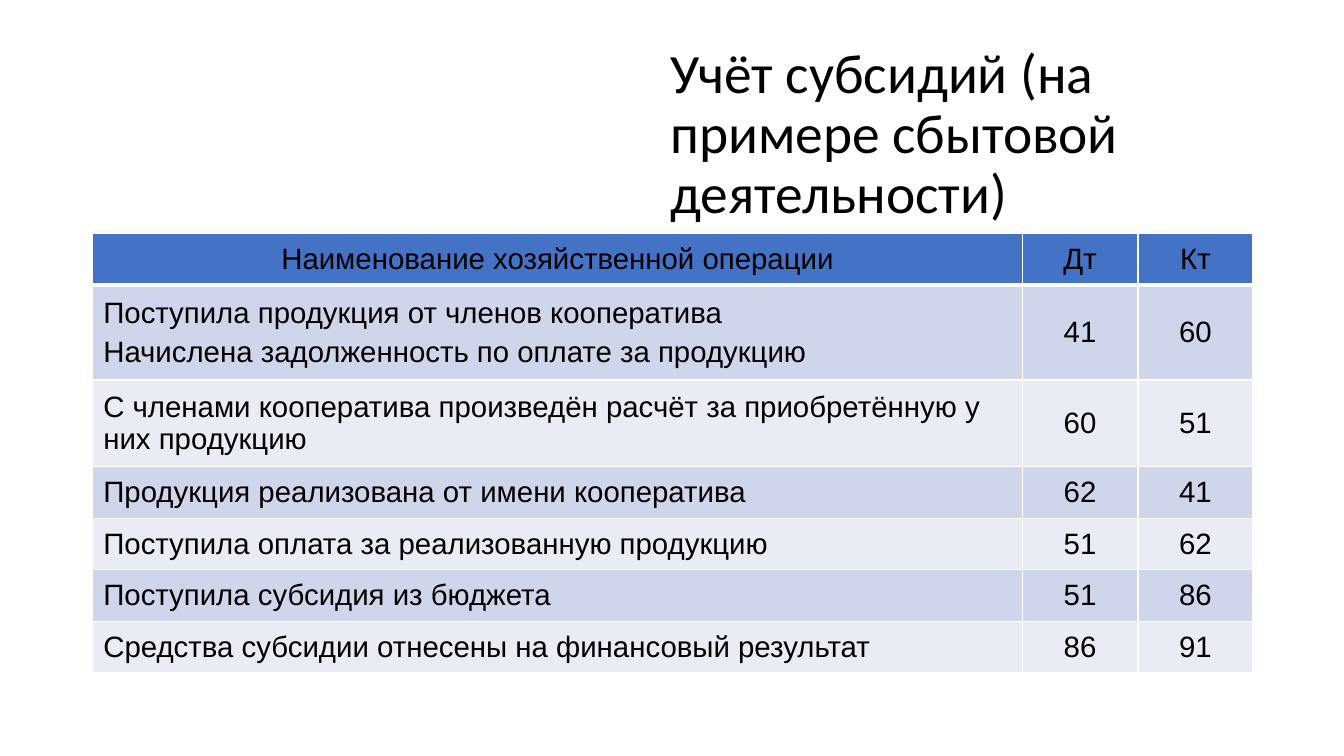
"""Build a slide with the accounting entries for cooperative subsidies."""
import dataclasses

import lxml.etree
import pptx
import pptx.dml.color
import pptx.enum.text
import pptx.oxml.ns
import pptx.table
import pptx.text.text
import pptx.util

Pt = pptx.util.Pt
Align = pptx.enum.text.PP_ALIGN
Anchor = pptx.enum.text.MSO_ANCHOR

COLOURS = {
    "text": "000000",
    "border": "FFFFFF",
    "header": "4472C4",
    "odd": "CFD5EA",
    "even": "E9EBF5",
}
COLUMN_WIDTHS = (663.8, 82.8, 82.1)


@dataclasses.dataclass(frozen=True)
class Entry:
    operation: str
    debit: str
    credit: str
    height: float = 36.8


ENTRIES = (
    Entry("Наименование хозяйственной операции", "Дт", "Кт"),
    Entry(
        "Поступила продукция от членов кооператива\n"
        "Начислена задолженность по оплате за продукцию",
        "41", "60", 67.7,
    ),
    Entry(
        "С членами кооператива произведён расчёт за приобретённую у них продукцию",
        "60", "51", 61.9,
    ),
    Entry("Продукция реализована от имени кооператива", "62", "41"),
    Entry("Поступила оплата за реализованную продукцию", "51", "62"),
    Entry("Поступила субсидия из бюджета", "51", "86"),
    Entry("Средства субсидии отнесены на финансовый результат", "86", "91"),
)


def colour(name: str) -> pptx.dml.color.RGBColor:
    return pptx.dml.color.RGBColor.from_string(COLOURS[name])


def format_para(para: pptx.text.text._Paragraph, font: str, size: float, align: Align) -> None:
    para.alignment = align
    for span in para.runs:
        span.font.name = font
        span.font.size = Pt(size)
        span.font.bold = False
        span.font.color.rgb = colour("text")


def add_borders(cell: pptx.table._Cell, bottom: float) -> None:
    qn = pptx.oxml.ns.qn
    properties = cell._tc.get_or_add_tcPr()
    for side, width in (("L", 1), ("R", 1), ("T", 1), ("B", bottom)):
        line = lxml.etree.SubElement(properties, qn(f"a:ln{side}"), w=str(Pt(width)))
        fill = lxml.etree.SubElement(line, qn("a:solidFill"))
        lxml.etree.SubElement(fill, qn("a:srgbClr"), val=COLOURS["border"])


def fill_cell(cell: pptx.table._Cell, text: str, fill: str, align: Align) -> None:
    add_borders(cell, 3 if fill == "header" else 1)
    cell.fill.solid()
    cell.fill.fore_color.rgb = colour(fill)
    cell.vertical_anchor = Anchor.MIDDLE
    cell.margin_left = cell.margin_right = Pt(7.5)
    cell.margin_top = cell.margin_bottom = Pt(3.6)
    cell.text_frame.text = text
    for index, para in enumerate(cell.text_frame.paragraphs):
        format_para(para, "Arial", 21, align)
        if index:
            para.space_before = Pt(4.2)


def add_title(page: pptx.slide.Slide) -> None:
    title = page.shapes.title
    title.left, title.top, title.width, title.height = map(Pt, (471.6, 22.3, 421.9, 149))
    frame = title.text_frame
    frame.text = "Учёт субсидий (на примере сбытовой деятельности)"
    frame.word_wrap = True
    frame.auto_size = pptx.enum.text.MSO_AUTO_SIZE.NONE
    frame.vertical_anchor = Anchor.MIDDLE
    para = frame.paragraphs[0]
    para.line_spacing = 0.9
    format_para(para, "Calibri", 39.6, Align.LEFT)


def add_entries(page: pptx.slide.Slide) -> None:
    height = sum(entry.height for entry in ENTRIES)
    table = page.shapes.add_table(
        len(ENTRIES), len(COLUMN_WIDTHS),
        Pt(66.3), Pt(167), Pt(sum(COLUMN_WIDTHS)), Pt(height),
    ).table
    for column, width in zip(table.columns, COLUMN_WIDTHS):
        column.width = Pt(width)
    for row, entry in enumerate(ENTRIES):
        table.rows[row].height = Pt(entry.height)
        fill = "header" if row == 0 else "odd" if row % 2 else "even"
        for column, text in enumerate((entry.operation, entry.debit, entry.credit)):
            align = Align.LEFT if row and column == 0 else Align.CENTER
            fill_cell(table.cell(row, column), text, fill, align)


def main() -> None:
    deck = pptx.Presentation()
    deck.slide_width, deck.slide_height = Pt(960), Pt(540)
    page = deck.slides.add_slide(deck.slide_layouts.get_by_name("Title Only"))
    add_title(page)
    add_entries(page)
    deck.save("out.pptx")


if __name__ == "__main__":
    main()
